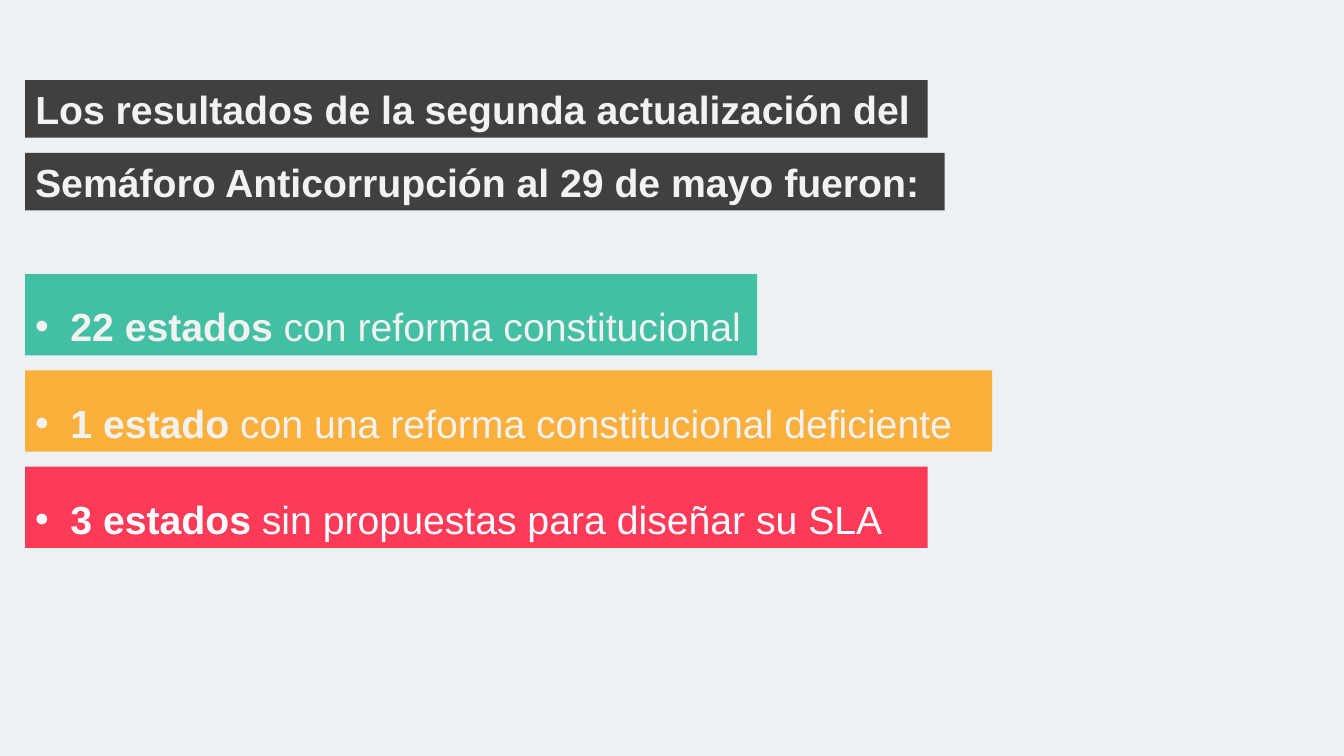
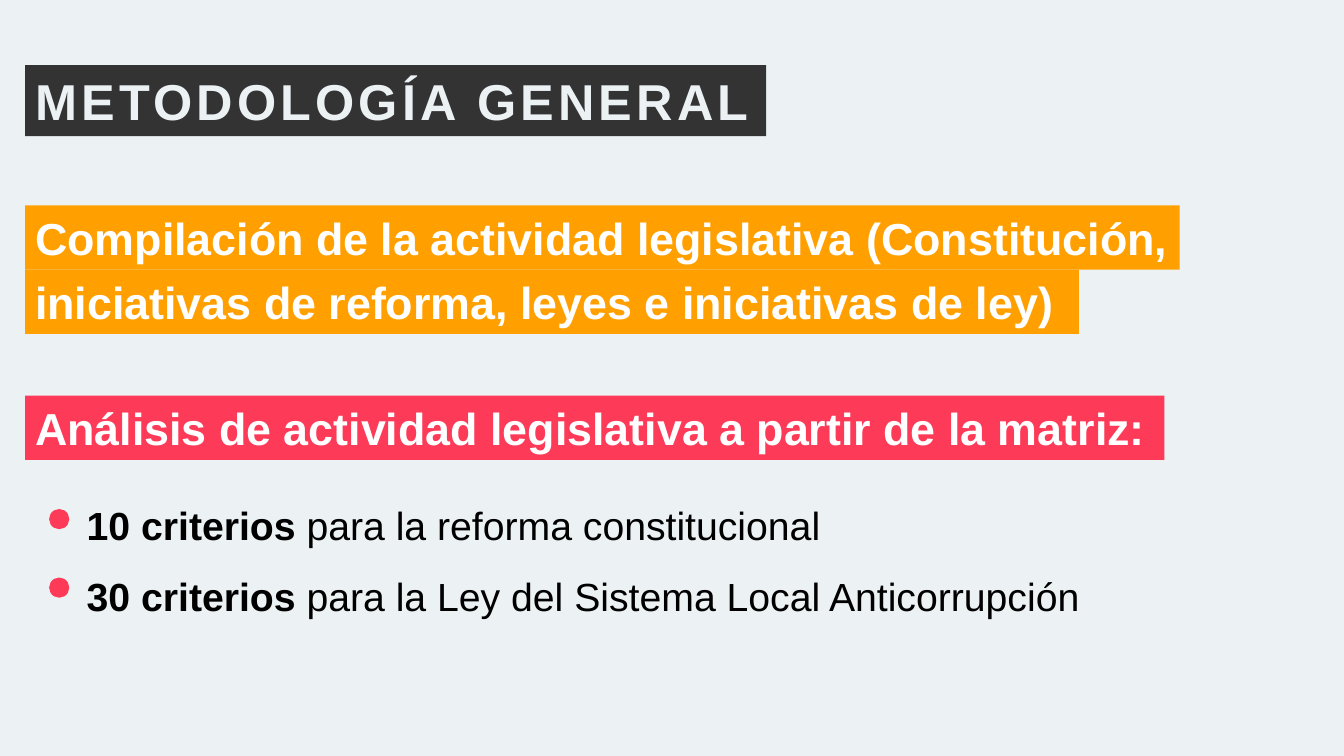
from lxml import etree
from pptx import Presentation
from pptx.dml.color import RGBColor
from pptx.enum.shapes import MSO_SHAPE as Preset
from pptx.enum.text import MSO_ANCHOR as Anchor, MSO_AUTO_SIZE as AutoSize, PP_ALIGN as Align
from pptx.oxml.ns import qn
from pptx.util import Inches, Pt

BACKGROUND = RGBColor(0xEC, 0xF1, 0xF4)
CHARCOAL = RGBColor(0x40, 0x40, 0x40)
DARK = RGBColor(0x33, 0x33, 0x33)
GREEN = RGBColor(0x43, 0xBF, 0xA4)
AMBER = RGBColor(0xFB, 0xB0, 0x3B)
ORANGE = RGBColor(0xFF, 0xA0, 0x00)
RED = RGBColor(0xFD, 0x3A, 0x57)
PALE = RGBColor(0xF2, 0xF2, 0xF2)
WHITE = RGBColor(0xFF, 0xFF, 0xFF)
BLACK = RGBColor(0x00, 0x00, 0x00)

TITLE_AND_BODY, TITLE_ONLY = 1, 5
MARGIN = 1


class Deck:
    font = "Arial"
    cell = 0.25
    line_ratio = 1.21
    inset = 0.05
    hanging = Inches(0.35)

    def __init__(self):
        self.prs = Presentation()
        self.prs.slide_width = Inches(13.33)
        self.prs.slide_height = Inches(7.5)
        fill = self.prs.slide_master.background.fill
        fill.solid()
        fill.fore_color.rgb = BACKGROUND
        self.slide = None

    def new_slide(self, layout):
        self.slide = self.prs.slides.add_slide(self.prs.slide_layouts[layout])

    def grid(self, cells):
        return Inches(cells * self.cell)

    def place(self, shape, col, row, cols, rows):
        shape.left, shape.top = self.grid(col), self.grid(row)
        shape.width, shape.height = self.grid(cols), self.grid(rows)

    def band_rows(self, size, spacing=1):
        return (size * self.line_ratio * spacing / 72 + 2 * self.inset) / self.cell

    def paint(self, shape, color):
        shape.fill.solid()
        shape.fill.fore_color.rgb = color
        shape.line.fill.background()

    def preset(self, kind, col, row, cols, rows, color):
        shape = self.slide.shapes.add_shape(
            kind, *(self.grid(cells) for cells in (col, row, cols, rows)))
        shape.shadow.inherit = False
        self.paint(shape, color)
        return shape

    def add_text(self, shape, lines, size, color, spacing=1, bullet=None, tracking=0):
        frame = shape.text_frame
        frame.word_wrap = True
        frame.auto_size = AutoSize.NONE
        frame.vertical_anchor = Anchor.TOP
        for index, runs in enumerate(lines):
            paragraph = frame.add_paragraph() if index else frame.paragraphs[0]
            self.mark(paragraph, bullet)
            paragraph.alignment = Align.LEFT
            paragraph.line_spacing = spacing
            paragraph.space_before = Pt(0)
            for text, bold in runs:
                run = paragraph.add_run()
                run.text = text
                run.font.name = self.font
                run.font.size = Pt(size)
                run.font.bold = bold
                run.font.color.rgb = color
                if tracking:
                    run._r.get_or_add_rPr().set("spc", str(tracking * 100))

    def mark(self, paragraph, bullet):
        properties = paragraph._p.get_or_add_pPr()
        hanging = self.hanging if bullet else 0
        properties.set("marL", str(int(hanging)))
        properties.set("indent", str(-int(hanging)))
        if bullet:
            etree.SubElement(properties, qn("a:buFont")).set("typeface", self.font)
            etree.SubElement(properties, qn("a:buChar")).set("char", bullet)
        else:
            etree.SubElement(properties, qn("a:buNone"))

    def title(self, text, row, cols, fill, size, color, tracking=0):
        title = self.slide.shapes.title
        self.place(title, MARGIN, row, cols, self.band_rows(size))
        self.paint(title, fill)
        self.add_text(title, [[(text, True)]], size, color, tracking=tracking)

    def band(self, runs, row, cols, fill, size, color, spacing=1, bullet=None):
        band = self.preset(Preset.RECTANGLE, MARGIN, row, cols,
                           self.band_rows(size, spacing), fill)
        self.add_text(band, [runs], size, color, spacing, bullet)

    def body(self, lines, col, row, cols, rows, size, color, spacing):
        body = self.slide.placeholders[1]
        self.place(body, col, row, cols, rows)
        self.add_text(body, lines, size, color, spacing)

    def dot(self, col, row, diameter, color):
        self.preset(Preset.OVAL, col, row, diameter, diameter, color)


def results_slide(deck):
    deck.new_slide(TITLE_ONLY)
    deck.title("Los resultados de la segunda actualización del",
               3.18, 35.8, CHARCOAL, 28, PALE)
    deck.band([("Semáforo Anticorrupción al 29 de mayo fueron:", True)],
              6.07, 36.48, CHARCOAL, 28, PALE)
    results = [
        ("22 estados ", "con reforma constitucional", 29.04, GREEN, PALE),
        ("1 estado ", "con una reforma constitucional deficiente", 38.36, AMBER, PALE),
        ("3 estados ", "sin propuestas para diseñar su SLA", 35.8, RED, WHITE),
    ]
    for index, (count, finding, cols, fill, color) in enumerate(results):
        deck.band([(count, True), (finding, False)], 10.88 + 3.82 * index,
                  cols, fill, 28, color, spacing=1.5, bullet="•")


def method_slide(deck):
    deck.new_slide(TITLE_AND_BODY)
    deck.title("METODOLOGÍA GENERAL", 2.58, 29.4, DARK, 36, BACKGROUND, tracking=3)
    compilation_row = 8.15
    steps = [
        ("Compilación de la actividad legislativa (Constitución,",
         compilation_row, 45.8, ORANGE),
        ("iniciativas de reforma, leyes e iniciativas de ley)",
         compilation_row + deck.band_rows(32), 41.8, ORANGE),
        ("Análisis de actividad legislativa a partir de la matriz:", 15.7, 45.2, RED),
    ]
    for step, row, cols, fill in steps:
        deck.band([(step, True)], row, cols, fill, 32, WHITE)
    criteria = [
        [("10 criterios ", True), ("para la reforma constitucional", False)],
        [("30 criterios ", True),
         ("para la Ley del Sistema Local Anticorrupción", False)],
    ]
    deck.body(criteria, 3.04, 18.76, 47.68, 6.04, 28, BLACK, 1.5)
    for index in range(len(criteria)):
        deck.dot(1.95, 20.2 + 2.72 * index, 0.8, RED)


def main():
    deck = Deck()
    results_slide(deck)
    method_slide(deck)
    deck.prs.save("out.pptx")


if __name__ == "__main__":
    main()
